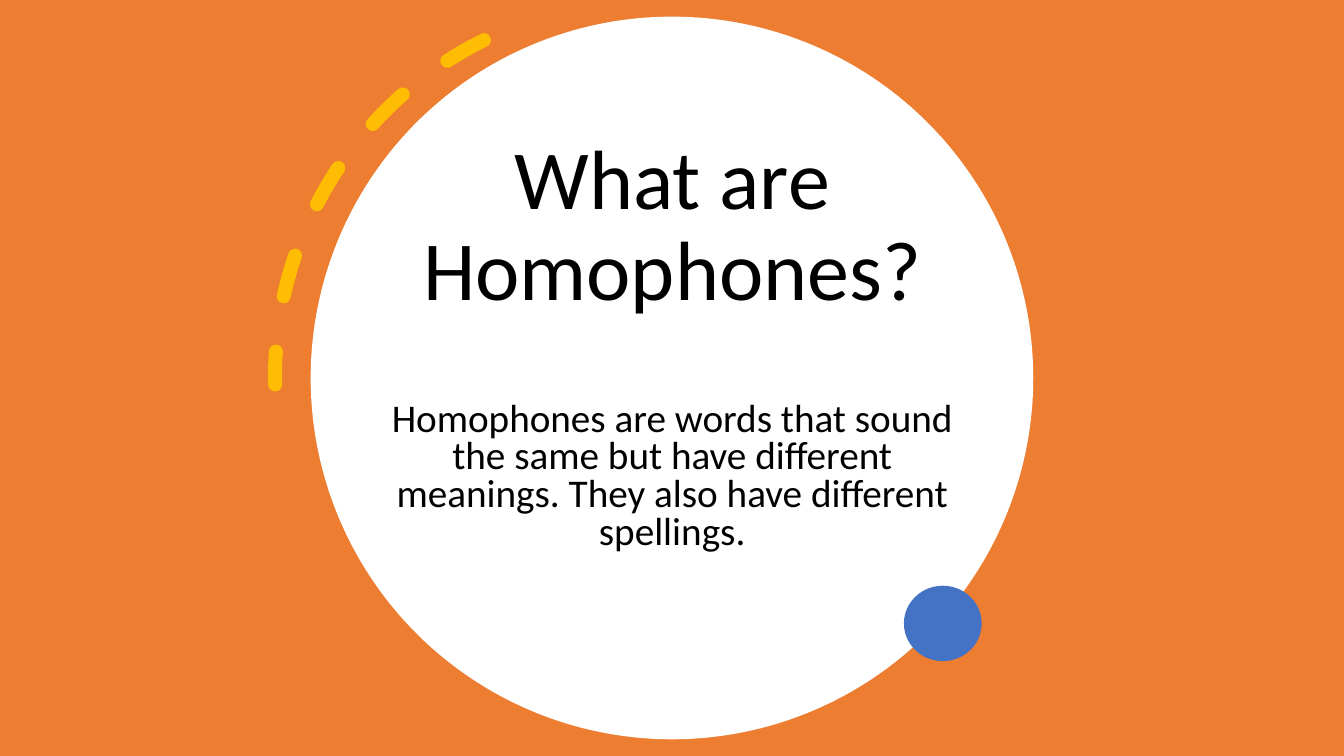
from lxml import etree
from pptx import Presentation
from pptx.dml.color import RGBColor
from pptx.enum.dml import MSO_LINE
from pptx.enum.shapes import MSO_SHAPE as Preset
from pptx.enum.text import MSO_ANCHOR, MSO_AUTO_SIZE, PP_ALIGN
from pptx.oxml.ns import qn
from pptx.util import Cm, Pt

# Content
HEADING = "What are Homophones?"
DEFINITION = ("Homophones are words that sound the same but have different "
              "meanings. They also have different spellings.")

ORANGE = RGBColor(0xED, 0x7D, 0x31)
WHITE = RGBColor(0xFF, 0xFF, 0xFF)
BLACK = RGBColor(0x00, 0x00, 0x00)
GOLD = RGBColor(0xFF, 0xC0, 0x00)
BLUE = RGBColor(0x44, 0x72, 0xC4)
FONT = "Calibri"

# Layout in centimetres: left, top, width, height
SLIDE_W, SLIDE_H = 33.87, 19.05
DISC_SIZE = 18.21
DISC = ((SLIDE_W - DISC_SIZE) / 2, (SLIDE_H - DISC_SIZE) / 2, DISC_SIZE, DISC_SIZE)
TEXT_LEFT, TEXT_W = 9.22, 15.44
HEADING_BOX = (TEXT_LEFT, 2.87, TEXT_W, 5.28)
DEFINITION_BOX = (TEXT_LEFT, 10.01, TEXT_W, 4.27)
DASHED_ARC = (6.93, 0.03, 18.92, 18.92)
DOT = (22.78, 14.76, 1.96, 1.9)


def add_filled(slide, preset, box, color):
    shape = slide.shapes.add_shape(preset, *map(Cm, box))
    shape.shadow.inherit = False
    shape.fill.solid()
    shape.fill.fore_color.rgb = color
    shape.line.fill.background()
    return shape


def set_text(frame, text, size, spacing, anchor):
    frame.text = text
    frame.word_wrap = True
    frame.auto_size = MSO_AUTO_SIZE.NONE
    frame.vertical_anchor = anchor
    paragraph = frame.paragraphs[0]
    paragraph.alignment = PP_ALIGN.CENTER
    paragraph.line_spacing = spacing
    paragraph.font.name = FONT
    paragraph.font.size = Pt(size)
    paragraph.font.color.rgb = BLACK
    return paragraph


def add_dashed_arc(slide):
    arc = slide.shapes.add_shape(Preset.ARC, *map(Cm, DASHED_ARC))
    arc.shadow.inherit = False
    arc.fill.background()
    # Arc angles are in 60000ths of a degree, adjustments in 100000ths
    for i, degrees in enumerate((270, 334.89)):
        arc.adjustments[i] = degrees * 0.6
    arc.rotation = 153.7
    arc._element.spPr.find(qn("a:xfrm")).set("flipV", "1")
    arc.line.color.rgb = GOLD
    arc.line.width = Pt(10)
    arc.line.dash_style = MSO_LINE.DASH
    # Round caps and slight transparency
    line = arc._element.spPr.find(qn("a:ln"))
    line.set("cap", "rnd")
    gold = line.find(qn("a:solidFill")).find(qn("a:srgbClr"))
    etree.SubElement(gold, qn("a:alpha")).set("val", "95000")


def main():
    prs = Presentation()
    prs.slide_width, prs.slide_height = Cm(SLIDE_W), Cm(SLIDE_H)
    slide = prs.slides.add_slide(prs.slide_layouts[5])

    # Backdrop and disc
    add_filled(slide, Preset.RECTANGLE, (0, 0, SLIDE_W, SLIDE_H), ORANGE)
    add_filled(slide, Preset.OVAL, DISC, WHITE)

    # Heading, brought in front of the disc
    heading = slide.shapes.title
    slide.shapes._spTree.append(heading._element)
    heading.left, heading.top, heading.width, heading.height = map(Cm, HEADING_BOX)
    set_text(heading.text_frame, HEADING, 60, 0.9, MSO_ANCHOR.BOTTOM)

    # Definition
    definition = slide.shapes.add_textbox(*map(Cm, DEFINITION_BOX))
    paragraph = set_text(definition.text_frame, DEFINITION, 28, 0.8, MSO_ANCHOR.TOP)
    paragraph.space_before = Pt(10)

    # Ornaments
    add_dashed_arc(slide)
    add_filled(slide, Preset.OVAL, DOT, BLUE)

    prs.save("out.pptx")


if __name__ == "__main__":
    main()
